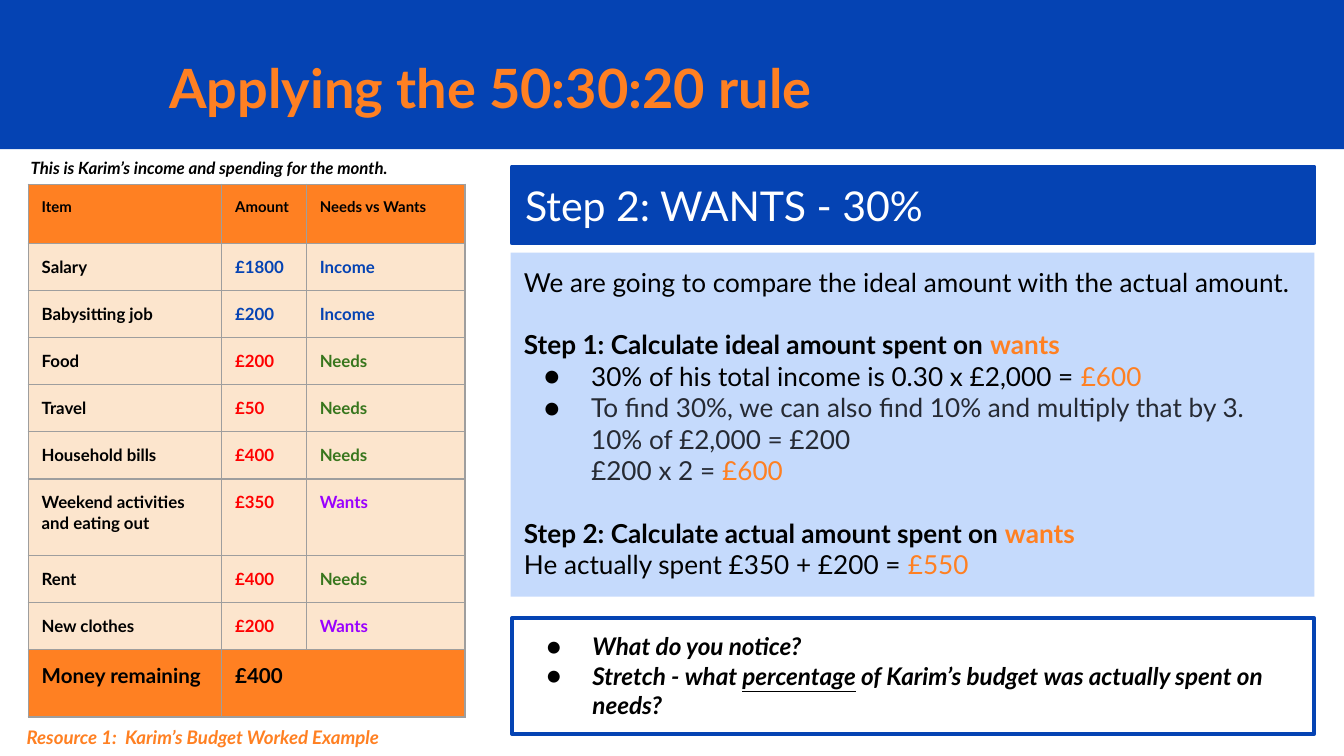
from dataclasses import dataclass

from lxml import etree
from pptx import Presentation
from pptx.dml.color import RGBColor
from pptx.enum.shapes import MSO_SHAPE
from pptx.enum.text import MSO_ANCHOR, MSO_AUTO_SIZE, PP_ALIGN
from pptx.oxml.ns import qn
from pptx.util import Inches, Pt

RECTANGLE = MSO_SHAPE.RECTANGLE
TOP = MSO_ANCHOR.TOP
LEFT = PP_ALIGN.LEFT
GROW_TO_FIT = MSO_AUTO_SIZE.SHAPE_TO_FIT_TEXT


@dataclass(frozen=True)
class Theme:
    font: str = "Lato"
    blue: str = "0543B3"
    pale_blue: str = "C5DAFC"
    orange: str = "FF8022"
    cream: str = "FCE5CD"
    white: str = "FFFFFF"
    black: str = "000000"
    charcoal: str = "262A33"
    red: str = "FF0000"
    green: str = "38761D"
    purple: str = "9900FF"
    grid: str = "9E9E9E"
    title_size: float = 29
    step_size: float = 22
    body_size: float = 14
    question_size: float = 13
    total_size: float = 11
    source_size: float = 10
    table_size: float = 9
    header_size: float = 8
    outline: float = 2.25
    grid_line: float = 0.75


THEME = Theme()


@dataclass(frozen=True)
class Line:
    runs: tuple
    margin: float = 0
    indent: float = 0
    bullet: bool = False
    gap: float = 0
    spacing: float = 1.0


def rgb(value):
    return RGBColor.from_string(value)


def add_bullet(properties):
    color = etree.SubElement(properties, qn("a:buClr"))
    etree.SubElement(color, qn("a:srgbClr"), val=THEME.black)
    etree.SubElement(properties, qn("a:buFont"), typeface=THEME.font)
    etree.SubElement(properties, qn("a:buChar"), char="●")


def write_line(paragraph, line, size):
    properties = paragraph._p.get_or_add_pPr()
    properties.set("marL", str(Inches(line.margin)))
    properties.set("indent", str(Inches(line.indent)))
    if line.bullet:
        add_bullet(properties)
    paragraph.alignment = LEFT
    paragraph.line_spacing = line.spacing
    if line.gap:
        paragraph.space_before = Pt(line.gap)
    for text, color, style in line.runs:
        run = paragraph.add_run()
        run.text = text
        run.font.name = THEME.font
        run.font.size = Pt(size)
        run.font.color.rgb = rgb(color)
        run.font.bold = "b" in style
        run.font.italic = "i" in style
        run.font.underline = "u" in style


def write_text(frame, lines, size):
    frame.word_wrap = True
    frame.auto_size = GROW_TO_FIT
    frame.vertical_anchor = TOP
    frame.margin_left = frame.margin_right = Inches(0.1)
    frame.margin_top = frame.margin_bottom = Inches(0.1)
    for index, line in enumerate(lines):
        paragraph = frame.add_paragraph() if index else frame.paragraphs[0]
        write_line(paragraph, line, size)


def add_panel(slide, box, fill, outline=None):
    shape = slide.shapes.add_shape(RECTANGLE, *map(Inches, box))
    shape.shadow.inherit = False
    shape.fill.solid()
    shape.fill.fore_color.rgb = rgb(fill)
    if outline:
        shape.line.color.rgb = rgb(outline)
        shape.line.width = Pt(THEME.outline)
    else:
        shape.line.fill.background()
    return shape


def add_header(slide, box):
    left, top, width, height = box
    band = add_panel(slide, box, THEME.blue)
    title = slide.shapes.title
    title.element.addprevious(band.element)
    title.left, title.top = Inches(left + 1.16), Inches(top + 0.23)
    title.width, title.height = Inches(7.12), Inches(0.69)
    line = Line((("Applying the 50:30:20 rule", THEME.orange, "b"),), spacing=1.15)
    write_text(title.text_frame, [line], THEME.title_size)


def add_caption(slide, box, text, color, size, spacing=1.0):
    shape = slide.shapes.add_textbox(*map(Inches, box))
    write_text(shape.text_frame, [Line(((text, color, "bi"),), spacing=spacing)], size)


def add_cell_borders(cell):
    properties = cell._tc.get_or_add_tcPr()
    for position, side in enumerate(("a:lnL", "a:lnR", "a:lnT", "a:lnB")):
        border = etree.Element(qn(side), w=str(Pt(THEME.grid_line)))
        fill = etree.SubElement(border, qn("a:solidFill"))
        etree.SubElement(fill, qn("a:srgbClr"), val=THEME.grid)
        properties.insert(position, border)


def fill_cell(cell, text, fill, color, size):
    cell.fill.solid()
    cell.fill.fore_color.rgb = rgb(fill)
    add_cell_borders(cell)
    cell.margin_left = cell.margin_right = Inches(0.1)
    cell.margin_top = cell.margin_bottom = Inches(0.1)
    if text:
        write_line(cell.text_frame.paragraphs[0], Line(((text, color, "b"),)), size)


def add_budget(slide, box):
    left, top, width, height = box
    kind_colors = {"Income": THEME.blue, "Needs": THEME.green, "Wants": THEME.purple}
    records = [
        ("Item", "Amount", "Needs vs Wants"),
        ("Salary", "£1800", "Income"),
        ("Babysitting job", "£200", "Income"),
        ("Food", "£200", "Needs"),
        ("Travel", "£50", "Needs"),
        ("Household bills", "£400", "Needs"),
        ("Weekend activities and eating out", "£350", "Wants"),
        ("Rent", "£400", "Needs"),
        ("New clothes", "£200", "Wants"),
        ("Money remaining", "£400", ""),
    ]
    last = len(records) - 1
    row_heights = {0: 0.44, 6: 0.57, last: 0.5}
    frame = slide.shapes.add_table(len(records), 3, *map(Inches, box))
    table = frame.table
    for column, column_width in zip(table.columns, (1.44, 0.63, width - 2.07)):
        column.width = Inches(column_width)
    for index, record in enumerate(records):
        table.rows[index].height = Inches(row_heights.get(index, 0.35))
        fill, size, colors = THEME.orange, THEME.header_size, (THEME.black,) * 3
        if index == last:
            size = THEME.total_size
        elif index:
            fill, size = THEME.cream, THEME.table_size
            kind = record[2]
            amount_color = THEME.blue if kind == "Income" else THEME.red
            colors = (THEME.black, amount_color, kind_colors[kind])
        for column, (text, color) in enumerate(zip(record, colors)):
            fill_cell(table.cell(index, column), text, fill, color, size)
    table.cell(last, 1).merge(table.cell(last, 2))
    add_caption(slide, (left - 0.08, top - 0.27, 3.09, 0.35),
                "This is Karim’s income and spending for the month.",
                THEME.black, THEME.table_size)
    add_caption(slide, (left - 0.11, top + height - 0.05, 3.93, 0.37),
                "Resource 1:  Karim’s Budget Worked Example",
                THEME.orange, THEME.source_size, 1.15)


def add_worked_steps(slide, box):
    left, top, width, height = box
    black, orange, charcoal = THEME.black, THEME.orange, THEME.charcoal
    heading = add_panel(slide, (left, top, width, 0.57), THEME.blue, THEME.blue)
    write_text(heading.text_frame, [Line((("Step 2: WANTS - 30%", THEME.white, ""),))],
               THEME.step_size)
    gap = THEME.body_size * 1.2
    bullet = {"margin": 0.5, "indent": -0.35, "bullet": True}
    lines = [
        Line((("We are going to compare the ideal amount with the actual amount.", black, ""),)),
        Line((("Step 1: Calculate ideal amount spent on ", black, "b"),
              ("wants", orange, "b")), gap=gap),
        Line((("30% of his total income is 0.30 x £2,000 = ", black, ""),
              ("£600", orange, "")), **bullet),
        Line((("To find 30%, we can also find 10% and multiply that by 3.", charcoal, ""),),
             **bullet),
        Line((("10% of £2,000 = £200", charcoal, ""),), indent=0.5),
        Line((("£200 x 2 =", charcoal, ""), (" £600", orange, "")), indent=0.5),
        Line((("Step 2: Calculate actual amount spent on ", black, "b"),
              ("wants", orange, "b")), gap=gap),
        Line((("He actually spent £350 + £200 = ", black, ""), ("£550", orange, ""))),
    ]
    body = add_panel(slide, (left - 0.01, top + 0.64, width + 0.01, height - 0.64),
                     THEME.pale_blue)
    write_text(body.text_frame, lines, THEME.body_size)


def add_questions(slide, box):
    panel = add_panel(slide, box, THEME.white, THEME.blue)
    bullet = {"margin": 0.5, "indent": -0.34, "bullet": True}
    lines = [
        Line((("What do you notice?", THEME.black, "bi"),), **bullet),
        Line((("Stretch - what ", THEME.black, "bi"),
              ("percentage", THEME.black, "biu"),
              (" of Karim’s budget was actually spent on needs?", THEME.black, "bi")),
             **bullet),
    ]
    write_text(panel.text_frame, lines, THEME.question_size)


def main():
    presentation = Presentation()
    presentation.slide_width = Inches(10)
    presentation.slide_height = presentation.slide_width * 9 // 16
    slide = presentation.slides.add_slide(presentation.slide_layouts[5])
    add_header(slide, (0, 0, 10, 1.11))
    add_budget(slide, (0.21, 1.37, 3.25, 3.96))
    add_worked_steps(slide, (3.81, 1.24, 5.97, 3.2))
    add_questions(slide, (3.81, 4.6, 5.97, 0.86))
    presentation.save("out.pptx")


if __name__ == "__main__":
    main()
